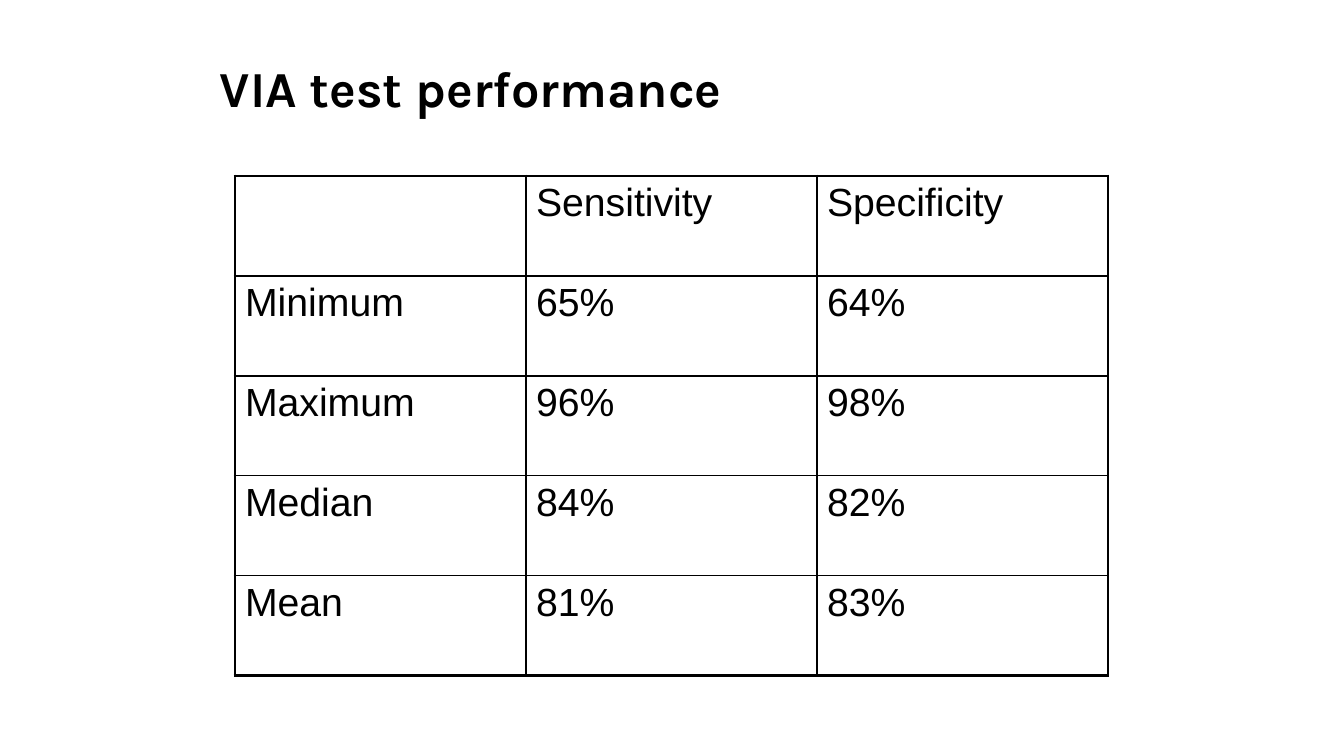
from dataclasses import dataclass

from lxml.etree import SubElement
from pptx import Presentation
from pptx.dml.color import RGBColor
from pptx.enum.text import MSO_ANCHOR
from pptx.oxml.ns import qn
from pptx.slide import Slide
from pptx.table import _Cell as Cell
from pptx.text.text import TextFrame
from pptx.util import Inches, Pt

PX = Inches(1) / 100.8
COLORS = {"ink": "000000"}
OUTER, INNER = 2.25, 1


@dataclass
class TextStyle:
    font: str
    size: int
    bold: bool = False


@dataclass
class Grid:
    left: int
    top: int
    column_width: int
    row_height: int


TITLE_STYLE = TextStyle("Karla", 36, True)
CELL_STYLE = TextStyle("Arial", 28)
GRID = Grid(left=235, top=176, column_width=291, row_height=100)
ROWS = [
    ("", "Sensitivity", "Specificity"),
    ("Minimum", "65%", "64%"),
    ("Maximum", "96%", "98%"),
    ("Median", "84%", "82%"),
    ("Mean", "81%", "83%"),
]


def px(length: int) -> int:
    return round(length * PX)


def write(frame: TextFrame, text: str, style: TextStyle) -> None:
    frame.text = text
    para = frame.paragraphs[0]
    for font in [para.font, *(span.font for span in para.runs)]:
        font.name = style.font
        font.size = Pt(style.size)
        font.bold = style.bold
        font.color.rgb = RGBColor.from_string(COLORS["ink"])


def add_border(cell: Cell, side: str, width: float) -> None:
    properties = cell._tc.get_or_add_tcPr()
    line = SubElement(properties, qn(f"a:ln{side}"), w=str(Pt(width)))
    fill = SubElement(line, qn("a:solidFill"))
    SubElement(fill, qn("a:srgbClr"), val=COLORS["ink"])


def add_title(page: Slide, text: str) -> None:
    box = page.shapes.add_textbox(px(210), px(41), px(884), px(101))
    frame = box.text_frame
    frame.word_wrap = True
    frame.vertical_anchor = MSO_ANCHOR.MIDDLE
    write(frame, text, TITLE_STYLE)
    frame.paragraphs[0].line_spacing = 0.9


def add_results(page: Slide, rows: list[tuple[str, ...]], grid: Grid) -> None:
    """Draw the table with a heavy outer frame and thin inner rules."""
    row_count, column_count = len(rows), len(rows[0])
    table = page.shapes.add_table(
        row_count, column_count, px(grid.left), px(grid.top),
        px(grid.column_width * column_count), px(grid.row_height * row_count),
    ).table
    table.first_row = table.horz_banding = False
    for r, values in enumerate(rows):
        for c, value in enumerate(values):
            cell = table.cell(r, c)
            write(cell.text_frame, value, CELL_STYLE)
            on_edge = {
                "L": c == 0,
                "R": c == column_count - 1,
                "T": r == 0,
                "B": r == row_count - 1,
            }
            for side, outer in on_edge.items():
                add_border(cell, side, OUTER if outer else INNER)
            cell.fill.background()


def main() -> None:
    deck = Presentation()
    deck.slide_width, deck.slide_height = px(1344), px(756)
    page = deck.slides.add_slide(deck.slide_layouts[6])
    add_title(page, "VIA test performance")
    add_results(page, ROWS, GRID)
    deck.save("out.pptx")


if __name__ == "__main__":
    main()
